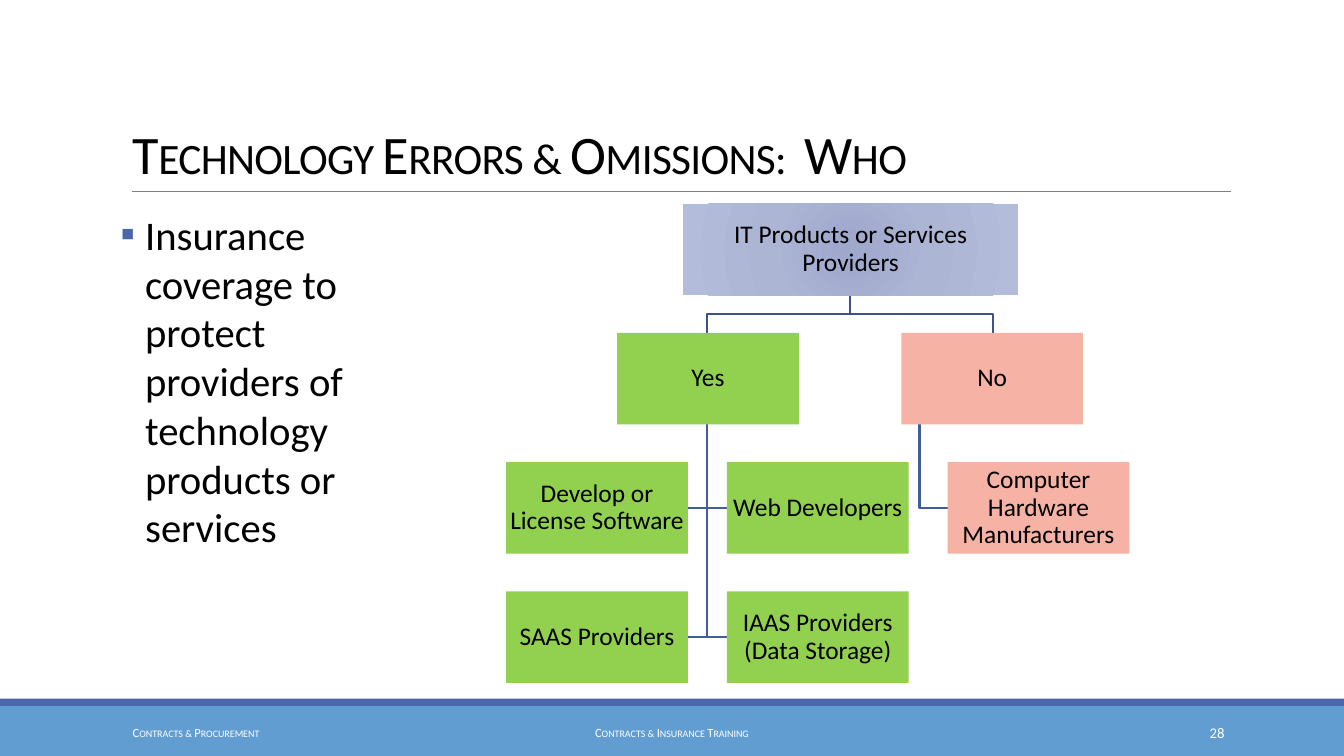
from lxml import etree
from pptx import Presentation
from pptx.dml.color import RGBColor
from pptx.enum.shapes import MSO_CONNECTOR, MSO_SHAPE
from pptx.enum.text import MSO_ANCHOR, PP_ALIGN
from pptx.oxml.ns import qn
from pptx.util import Inches, Pt

BLACK = RGBColor(0x00, 0x00, 0x00)
WHITE = RGBColor(0xFF, 0xFF, 0xFF)
GREY = RGBColor(0x80, 0x80, 0x80)
SKY = RGBColor(0x62, 0x9D, 0xD1)
INDIGO = RGBColor(0x4A, 0x66, 0xAC)
GREEN = RGBColor(0x92, 0xD0, 0x50)
SALMON = RGBColor(0xF6, 0xB2, 0xA4)
UPPER_LINE = RGBColor(0x3B, 0x52, 0x8A)
LOWER_LINE = RGBColor(0x43, 0x5D, 0x9C)
ROOT_STOPS = [
    (0, RGBColor(0x9E, 0xA7, 0xCC)),
    (45000, RGBColor(0xAD, 0xB5, 0xD5)),
    (100000, RGBColor(0xB4, 0xBC, 0xDC)),
]

deck = Presentation()
deck.slide_width, deck.slide_height = Inches(11.02), Inches(6.2)
page = deck.slides.add_slide(deck.slide_layouts[6])


def add_rectangle(left, top, width, height, color):
    box = page.shapes.add_shape(
        MSO_SHAPE.RECTANGLE, Inches(left), Inches(top), Inches(width), Inches(height))
    box.shadow.inherit = False
    box.fill.solid()
    box.fill.fore_color.rgb = color
    box.line.fill.background()
    return box


def write_text(box, text, size, color, align, anchor, margins=(0.1, 0.05), small_caps=False):
    frame = box.text_frame
    across, down = (Inches(margin) for margin in margins)
    settings = {"word_wrap": True, "vertical_anchor": anchor,
                "margin_left": across, "margin_right": across,
                "margin_top": down, "margin_bottom": down}
    for name, value in settings.items():
        setattr(frame, name, value)
    para = frame.paragraphs[0]
    para.alignment = align
    span = para.add_run()
    span.text = text
    for name, value in {"name": "Calibri", "size": Pt(size)}.items():
        setattr(span.font, name, value)
    span.font.color.rgb = color
    if small_caps:
        span.font._element.set("cap", "small")
    return para


add_rectangle(0, 5.79, 11.02, 0.41, SKY)
add_rectangle(0, 5.73, 11.02, 0.06, INDIGO)

rule = page.shapes.add_connector(
    MSO_CONNECTOR.STRAIGHT, Inches(1.08), Inches(1.57), Inches(10.09), Inches(1.57))
rule.line.color.rgb = GREY
rule.line.width = Pt(0.5)
etree.SubElement(rule._element.spPr, qn("a:effectLst"))

title = page.shapes.add_textbox(Inches(0.99), Inches(0.26), Inches(9.09), Inches(1.31))
para = write_text(title, "Technology Errors & Omissions:  Who", 32, BLACK,
                  PP_ALIGN.LEFT, MSO_ANCHOR.BOTTOM, small_caps=True)
para.line_spacing = 0.85
para.runs[0].font._element.set("spc", "-40")

body = page.shapes.add_textbox(Inches(0.99), Inches(1.67), Inches(2.34), Inches(3.93))
para = write_text(
    body, "Insurance coverage to protect providers of technology products or services",
    24, BLACK, PP_ALIGN.LEFT, MSO_ANCHOR.TOP, margins=(0, 0.05))
para.space_before = Pt(6)
properties = para._element.get_or_add_pPr()
properties.set("marL", str(Inches(0.2)))
properties.set("indent", str(Inches(-0.2)))
bullet_color = etree.SubElement(properties, qn("a:buClr"))
etree.SubElement(bullet_color, qn("a:srgbClr"), val=str(INDIGO))
etree.SubElement(properties, qn("a:buFont"), typeface="Calibri")
etree.SubElement(properties, qn("a:buChar"), char="▪")

BOX_WIDTH, BOX_HEIGHT = 1.49, 0.75
ROOT_LEFT, ROOT_WIDTH = 5.6, 2.75
ROOT_MIDDLE = 6.97
YES_TRUNK, NO_TRUNK, NO_MIDDLE = 5.8, 7.54, 8.14
rows = [1.67 + 1.06 * step for step in range(4)]
columns = [4.15 + 1.81 * step for step in range(3)]

root_bottom = rows[0] + BOX_HEIGHT
branch_bottom = rows[1] + BOX_HEIGHT
fork = (root_bottom + rows[1]) / 2
elbows = [
    (UPPER_LINE, [(ROOT_MIDDLE, root_bottom), (ROOT_MIDDLE, fork), (middle, fork), (middle, rows[1])])
    for middle in (NO_MIDDLE, YES_TRUNK)
]
leaf_ends = [
    (NO_TRUNK, columns[2], rows[2]),
    (YES_TRUNK, columns[1], rows[3]),
    (YES_TRUNK, columns[0] + BOX_WIDTH, rows[3]),
    (YES_TRUNK, columns[1], rows[2]),
    (YES_TRUNK, columns[0] + BOX_WIDTH, rows[2]),
]
for trunk, edge, top in leaf_ends:
    level = top + BOX_HEIGHT / 2
    elbows.append((LOWER_LINE, [(trunk, branch_bottom), (trunk, level), (edge, level)]))

for color, points in elbows:
    corners = [(Inches(x), Inches(y)) for x, y in points]
    builder = page.shapes.build_freeform(*corners[0])
    builder.add_line_segments(corners[1:], close=False)
    elbow = builder.convert_to_shape()
    elbow.shadow.inherit = False
    elbow.fill.background()
    elbow.line.color.rgb = color
    elbow.line.width = Pt(1.25)

nodes = [
    ("IT Products or Services Providers", ROOT_LEFT, rows[0], ROOT_WIDTH, ROOT_STOPS[1][1]),
    ("Yes", 5.06, rows[1], BOX_WIDTH, GREEN),
    ("Develop or License Software", columns[0], rows[2], BOX_WIDTH, GREEN),
    ("Web Developers", columns[1], rows[2], BOX_WIDTH, GREEN),
    ("SAAS Providers", columns[0], rows[3], BOX_WIDTH, GREEN),
    ("IAAS Providers (Data Storage)", columns[1], rows[3], BOX_WIDTH, GREEN),
    ("No", 7.39, rows[1], BOX_WIDTH, SALMON),
    ("Computer Hardware Manufacturers", columns[2], rows[2], BOX_WIDTH, SALMON),
]
node_boxes = []
for text, left, top, width, color in nodes:
    box = add_rectangle(left, top, width, BOX_HEIGHT, color)
    para = write_text(box, text, 15, BLACK, PP_ALIGN.CENTER, MSO_ANCHOR.MIDDLE, margins=(0.01, 0.01))
    para.line_spacing = 0.9
    node_boxes.append(box)

root = node_boxes[0]
root.fill.gradient()
gradient = root._element.spPr.find(qn("a:gradFill"))
for child in list(gradient):
    gradient.remove(child)
stops = etree.SubElement(gradient, qn("a:gsLst"))
for position, color in ROOT_STOPS:
    stop = etree.SubElement(stops, qn("a:gs"), pos=str(position))
    etree.SubElement(stop, qn("a:srgbClr"), val=str(color))
circle = etree.SubElement(gradient, qn("a:path"), path="circle")
etree.SubElement(circle, qn("a:fillToRect"), l="100000", t="100000", r="100000", b="100000")

footers = [
    ("Contracts & Procurement", 0.99, 2.23, 7.4, PP_ALIGN.LEFT, True),
    ("Contracts & Insurance Training", 3.33, 4.36, 7.4, PP_ALIGN.CENTER, True),
    ("28", 8.95, 1.19, 8.7, PP_ALIGN.RIGHT, False),
]
for text, left, width, size, align, small_caps in footers:
    box = page.shapes.add_textbox(Inches(left), Inches(5.84), Inches(width), Inches(0.33))
    write_text(box, text, size, WHITE, align, MSO_ANCHOR.MIDDLE, small_caps=small_caps)

deck.save("out.pptx")
